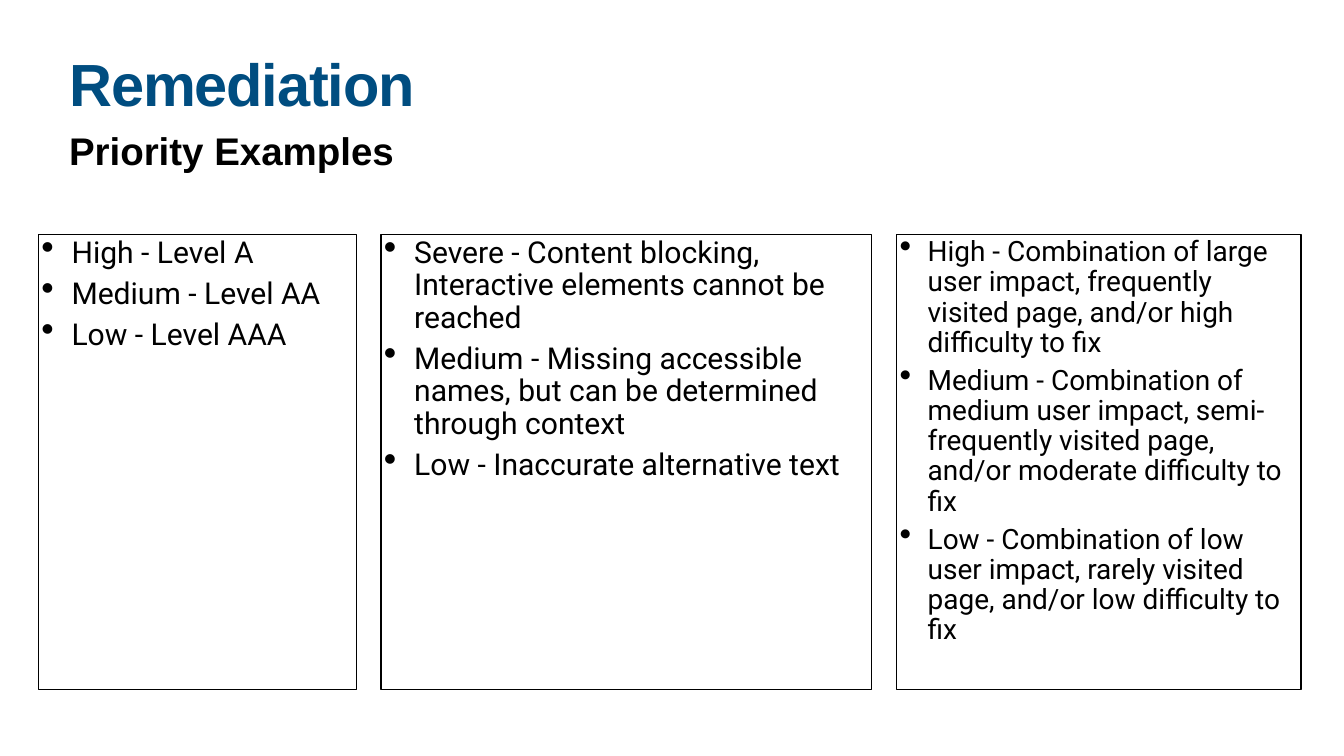
from dataclasses import dataclass

from lxml import etree
from pptx import Presentation
from pptx.dml.color import RGBColor
from pptx.enum import shapes, text
from pptx.oxml.ns import qn
from pptx.util import Inches, Pt


@dataclass(frozen=True)
class Theme:
    heading_font: str = "Arial"
    body_font: str = "Roboto"
    blue: RGBColor = RGBColor(0x00, 0x4D, 0x80)
    black: RGBColor = RGBColor(0x00, 0x00, 0x00)
    title_size: int = 85
    subtitle_size: int = 55
    body_size: int = 43
    small_body_size: int = 40


theme = Theme()


def prepare_frame(shape, inset, anchor):
    frame = shape.text_frame
    frame.word_wrap = True
    frame.auto_size = text.MSO_AUTO_SIZE.NONE
    frame.vertical_anchor = anchor
    frame.margin_left = frame.margin_right = Inches(inset)
    frame.margin_top = frame.margin_bottom = Inches(inset)
    return frame


def style_paragraph(para, words, font_name, size, color, bold=False):
    para.text = words
    para.alignment = text.PP_ALIGN.LEFT
    para.font.name = font_name
    para.font.size = Pt(size)
    para.font.bold = bold
    para.font.color.rgb = color


deck = Presentation()
deck.slide_width, deck.slide_height = Inches(26.67), Inches(15)
page = deck.slides.add_slide(deck.slide_layouts[5])

# Headings
title = page.shapes.title
title.left, title.top = Inches(1.32), Inches(1.04)
title.width, title.height = Inches(24.03), Inches(1.57)
para = prepare_frame(title, 0.06, text.MSO_ANCHOR.TOP).paragraphs[0]
style_paragraph(para, "Remediation", theme.heading_font, theme.title_size, theme.blue, bold=True)
para.line_spacing = 0.9
para.runs[0].font._element.set("spc", "-170")

subtitle = page.shapes.add_textbox(Inches(1.32), Inches(2.46), Inches(24.03), Inches(1.02))
para = prepare_frame(subtitle, 0.05, text.MSO_ANCHOR.MIDDLE).paragraphs[0]
style_paragraph(para, "Priority Examples", theme.heading_font, theme.subtitle_size,
                theme.black, bold=True)

# Priority columns: width, type size, bullet indent, space before, items
columns = [
    (6.31, theme.body_size, 0.6, 12, [
        "High - Level A",
        "Medium - Level AA",
        "Low - Level AAA",
    ]),
    (9.74, theme.body_size, 0.6, 12, [
        "Severe - Content blocking, Interactive elements cannot be reached",
        "Medium - Missing accessible names, but can be determined through context",
        "Low - Inaccurate alternative text",
    ]),
    (8.03, theme.small_body_size, 0.56, 11, [
        "High - Combination of large user impact, frequently visited page, "
        "and/or high difficulty to fix",
        "Medium - Combination of medium user impact, semi-frequently visited page, "
        "and/or moderate difficulty to fix",
        "Low - Combination of low user impact, rarely visited page, "
        "and/or low difficulty to fix",
    ]),
]
left, gap = 0.76, 0.49

for width, size, indent, space_before, items in columns:
    box = page.shapes.add_shape(shapes.MSO_SHAPE.RECTANGLE, Inches(left), Inches(4.65),
                                Inches(width), Inches(9.03))
    box.shadow.inherit = False
    box.fill.background()
    box.line.color.rgb = theme.black
    box.line.width = Pt(2)
    frame = prepare_frame(box, 0.06, text.MSO_ANCHOR.TOP)
    for index, item in enumerate(items):
        para = frame.add_paragraph() if index else frame.paragraphs[0]
        style_paragraph(para, item, theme.body_font, size, theme.black)
        para.line_spacing = 0.9
        para.space_before = Pt(space_before)
        properties = para._p.get_or_add_pPr()
        properties.set("marL", str(Inches(indent)))
        properties.set("indent", str(-Inches(indent)))
        bullet_size = etree.Element(qn("a:buSzPct"), val="123000")
        bullet = etree.Element(qn("a:buChar"), char="•")
        properties.find(qn("a:defRPr")).addprevious(bullet_size)
        bullet_size.addnext(bullet)
    left += width + gap

deck.save("out.pptx")
